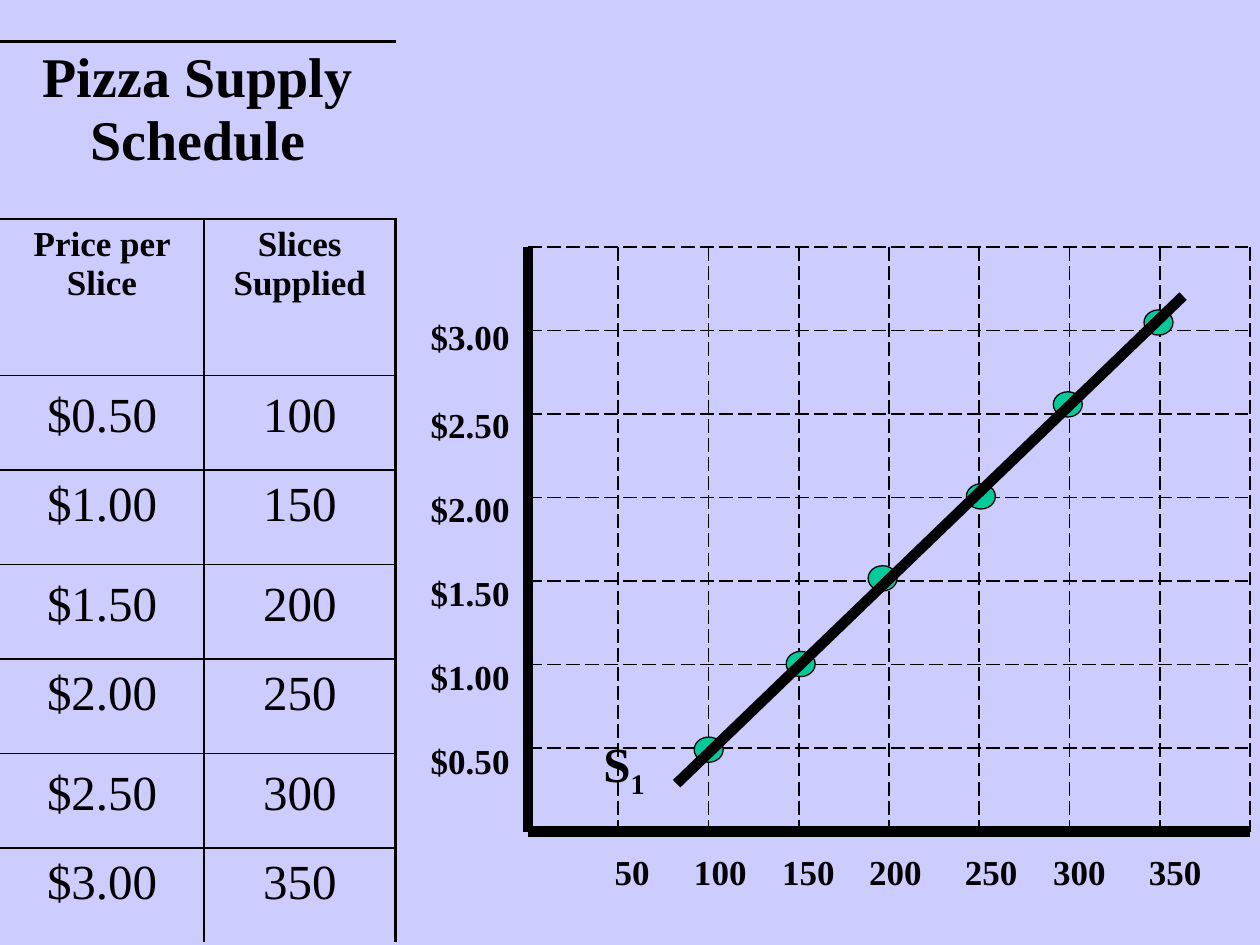
from dataclasses import dataclass
from itertools import cycle

from lxml.etree import SubElement
from pptx import Presentation
from pptx.dml.color import RGBColor
from pptx.enum.dml import MSO_LINE_DASH_STYLE as DASH
from pptx.enum.shapes import MSO_CONNECTOR, MSO_SHAPE
from pptx.enum.text import PP_ALIGN as ALIGN
from pptx.oxml.ns import qn
from pptx.util import Inches, Pt


@dataclass(frozen=True)
class Theme:
    font: str = "Times New Roman"
    background: RGBColor = RGBColor(0xCC, 0xCC, 0xFF)
    ink: RGBColor = RGBColor(0, 0, 0)
    point: RGBColor = RGBColor(0x00, 0xCC, 0x99)
    title: int = 32
    value: int = 28
    label: int = 20
    thin: float = 1
    frame: float = 2.25
    heavy: float = 6
    outline: float = 0.75


SCHEDULE = [
    ("$0.50", "100"),
    ("$1.00", "150"),
    ("$1.50", "200"),
    ("$2.00", "250"),
    ("$2.50", "300"),
    ("$3.00", "350"),
]
COLUMN_WIDTHS = [1.62, 1.52]
ROW_HEIGHTS = [1.41, 1.24] + [0.75] * len(SCHEDULE)
TABLE_TOP = 0.33

GRID_LEFT, GRID_TOP, GRID_RIGHT, GRID_BOTTOM = 4.19, 1.96, 9.92, 6.6
GRID_COLUMNS, GRID_ROWS = 8, 7
QUANTITY_TABS = [0.63, 1.33, 2.02, 2.78, 3.48, 4.24]
PRICE_SPACING = [2, 2.1, 2, 2, 2, 2]
POINT_SIZE = (0.23, 0.2)
POINT_CORNERS = [(5.51, 5.85), (6.24, 5.17), (6.89, 4.49),
                 (7.67, 3.84), (8.36, 3.11), (9.08, 2.46)]


class SlideBuilder:
    def __init__(self, slide, theme):
        self.slide = slide
        self.theme = theme
        slide.background.fill.solid()
        slide.background.fill.fore_color.rgb = theme.background

    def style(self, paragraph, size, bold=False, align=ALIGN.LEFT):
        paragraph.alignment = align
        for run in paragraph.runs:
            run.font.name = self.theme.font
            run.font.size = Pt(size)
            run.font.bold = bold
            run.font.color.rgb = self.theme.ink

    def text(self, left, top, width, height, content, size, wrap=True):
        shape = self.slide.shapes.add_textbox(
            Inches(left), Inches(top), Inches(width), Inches(height))
        frame = shape.text_frame
        frame.word_wrap = wrap
        frame.text = content
        for paragraph in frame.paragraphs:
            self.style(paragraph, size, bold=True)
        return frame

    def line(self, start, end, width, dash=None):
        x1, y1, x2, y2 = (Inches(value) for value in (*start, *end))
        connector = self.slide.shapes.add_connector(
            MSO_CONNECTOR.STRAIGHT, x1, y1, x2, y2)
        connector.line.color.rgb = self.theme.ink
        connector.line.width = Pt(width)
        if dash:
            connector.line.dash_style = dash
        SubElement(connector._element.spPr, qn("a:effectLst"))

    def point(self, left, top):
        width, height = POINT_SIZE
        shape = self.slide.shapes.add_shape(
            MSO_SHAPE.OVAL, Inches(left), Inches(top),
            Inches(width), Inches(height))
        shape.shadow.inherit = False
        shape.fill.solid()
        shape.fill.fore_color.rgb = self.theme.point
        shape.line.color.rgb = self.theme.ink
        shape.line.width = Pt(self.theme.outline)

    def borders(self, cell, **widths):
        """Set the L, R, T and B borders; a width of 0 hides one."""
        properties = cell._tc.get_or_add_tcPr()
        for side in "LRTB":
            width = widths[side]
            border = SubElement(properties, qn(f"a:ln{side}"), w=str(Pt(width)))
            if width:
                fill = SubElement(border, qn("a:solidFill"))
                SubElement(fill, qn("a:srgbClr"), val=str(self.theme.ink))
            else:
                SubElement(border, qn("a:noFill"))

    def cell(self, cell, content, size, bold=False, margin_top=0.05):
        cell.margin_top = Inches(margin_top)
        cell.text = content
        for paragraph in cell.text_frame.paragraphs:
            self.style(paragraph, size, bold, ALIGN.CENTER)

    def schedule(self):
        theme = self.theme
        rows, columns = len(ROW_HEIGHTS), len(COLUMN_WIDTHS)
        table = self.slide.shapes.add_table(
            rows, columns, Inches(0), Inches(TABLE_TOP),
            Inches(sum(COLUMN_WIDTHS)), Inches(sum(ROW_HEIGHTS))).table
        table.first_row = table.horz_banding = False
        for column, width in zip(table.columns, COLUMN_WIDTHS):
            column.width = Inches(width)
        for row, height in zip(table.rows, ROW_HEIGHTS):
            row.height = Inches(height)

        for r in range(rows):
            for c in range(columns):
                cell = table.cell(r, c)
                inner = theme.thin if r else 0
                self.borders(
                    cell,
                    L=inner if c else 0,
                    R=theme.frame if c == columns - 1 else inner,
                    T=theme.thin if r else theme.frame,
                    B=theme.thin if r < rows - 1 else 0)
                cell.fill.background()

        table.cell(0, 0).merge(table.cell(0, columns - 1))
        self.cell(table.cell(0, 0), "Pizza Supply Schedule", theme.title, True)
        for c, heading in enumerate(("Price per Slice", "Slices Supplied")):
            self.cell(table.cell(1, c), heading, theme.label, True)
        for r, (values, margin) in enumerate(zip(SCHEDULE, cycle((0.11, 0.06))), 2):
            for c, value in enumerate(values):
                self.cell(table.cell(r, c), value, theme.value, margin_top=margin)

    def grid(self):
        theme = self.theme
        row_step = (GRID_BOTTOM - GRID_TOP) / GRID_ROWS
        column_step = (GRID_RIGHT - GRID_LEFT) / GRID_COLUMNS
        for row in range(GRID_ROWS):
            y = GRID_TOP + row * row_step
            self.line((GRID_LEFT, y), (GRID_RIGHT, y), theme.thin, DASH.LONG_DASH)
        for column in range(1, GRID_COLUMNS + 1):
            x = GRID_LEFT + column * column_step
            self.line((x, GRID_TOP), (x, GRID_BOTTOM), theme.thin, DASH.LONG_DASH)
        origin = (GRID_LEFT, GRID_BOTTOM)
        self.line(origin, (GRID_RIGHT, GRID_BOTTOM), theme.heavy)
        self.line((GRID_LEFT, GRID_TOP), origin, theme.heavy)

    def axis_labels(self):
        prices = "\n".join(price for price, _ in reversed(SCHEDULE))
        frame = self.text(3.32, 2.12, 0.83, 4.13, prices, self.theme.label, wrap=False)
        for paragraph, spacing in zip(frame.paragraphs, PRICE_SPACING):
            paragraph.line_spacing = spacing

        quantities = "\t".join(["50"] + [quantity for _, quantity in SCHEDULE])
        frame = self.text(4.78, 6.7, 5.1, 0.43, quantities, self.theme.label)
        properties = frame.paragraphs[0]._p.get_or_add_pPr()
        tabs = SubElement(properties, qn("a:tabLst"))
        for position in QUANTITY_TABS:
            SubElement(tabs, qn("a:tab"), pos=str(Inches(position)), algn="l")

    def supply_curve(self):
        for corner in POINT_CORNERS:
            self.point(*corner)
        frame = self.text(4.69, 5.77, 0.61, 0.57, "S", self.theme.value)
        paragraph = frame.paragraphs[0]
        subscript = paragraph.add_run()
        subscript.text = "1"
        self.style(paragraph, self.theme.value, bold=True)
        subscript._r.get_or_add_rPr().set("baseline", "-25000")
        self.line((5.37, 6.22), (9.39, 2.35), self.theme.heavy)


def main():
    presentation = Presentation()
    presentation.slide_width = Inches(10)
    presentation.slide_height = Inches(7.5)
    slide = presentation.slides.add_slide(presentation.slide_layouts[6])
    builder = SlideBuilder(slide, Theme())
    builder.schedule()
    builder.grid()
    builder.axis_labels()
    builder.supply_curve()
    presentation.save("out.pptx")


if __name__ == "__main__":
    main()
